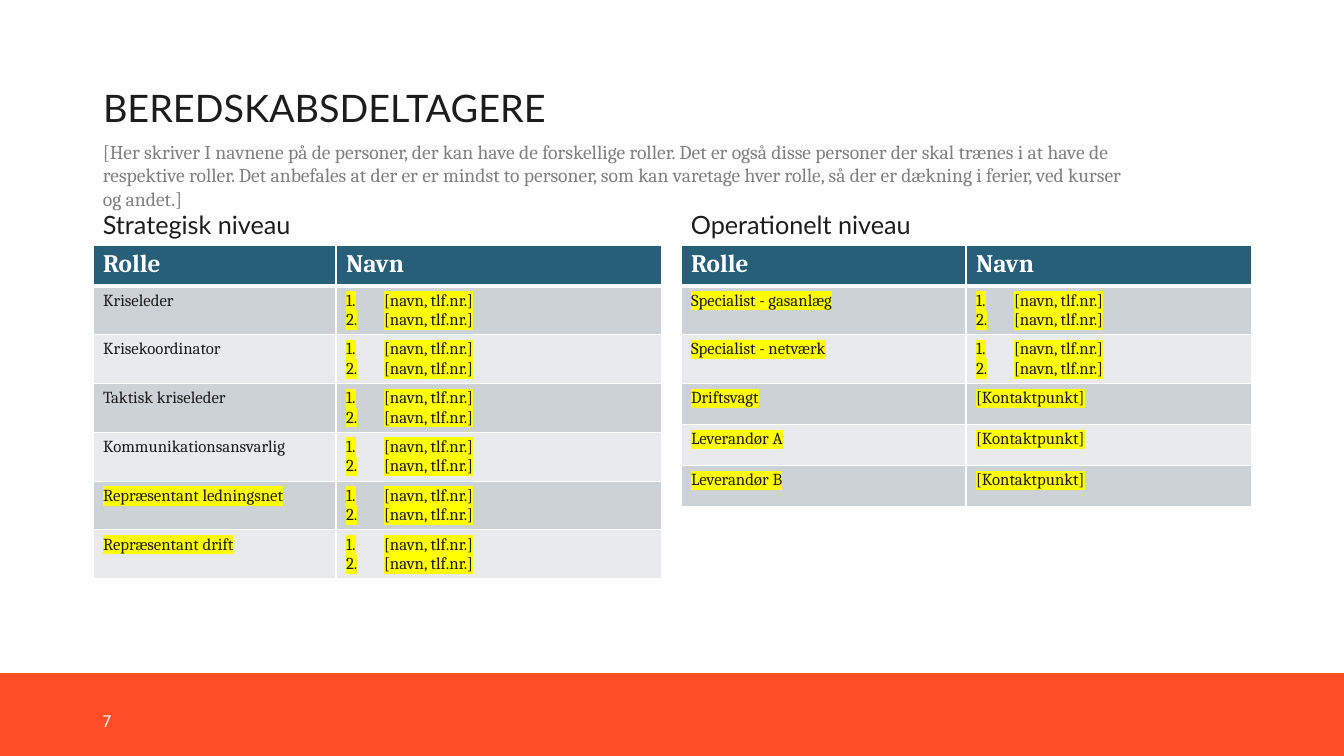
from lxml import etree
from pptx import Presentation
from pptx.dml.color import RGBColor
from pptx.enum.shapes import MSO_SHAPE
from pptx.enum.text import MSO_ANCHOR, MSO_AUTO_SIZE, PP_ALIGN
from pptx.oxml.ns import qn
from pptx.util import Emu, Pt

TITLE = "BEREDSKABSDELTAGERE"
INTRO = [
    "[Her skriver I navnene på de personer, der kan have de forskellige roller. Det er også disse personer der skal trænes i at have de",
    "respektive roller. Det anbefales at der er er mindst to personer, som kan varetage hver rolle, så der er dækning i ferier, ved kurser",
    "og andet.]",
]
PAGE_NUMBER = "7"
HEADER = ("Rolle", "Navn")
NAMES = ["[navn, tlf.nr.]", "[navn, tlf.nr.]"]
CONTACT = ["[Kontaktpunkt]"]
LEVELS = [
    {
        "heading": "Strategisk niveau",
        "left": 93,
        "columns": (243, 326),
        "roles": [
            ("Kriseleder", False, NAMES),
            ("Krisekoordinator", False, NAMES),
            ("Taktisk kriseleder", False, NAMES),
            ("Kommunikationsansvarlig", False, NAMES),
            ("Repræsentant ledningsnet", True, NAMES),
            ("Repræsentant drift", True, NAMES),
        ],
    },
    {
        "heading": "Operationelt niveau",
        "left": 681,
        "columns": (285, 286),
        "roles": [
            ("Specialist - gasanlæg", True, NAMES),
            ("Specialist - netværk", True, NAMES),
            ("Driftsvagt", True, CONTACT),
            ("Leverandør A", True, CONTACT),
            ("Leverandør B", True, CONTACT),
        ],
    },
]

COLORS = {
    "band": "FF4E26",
    "ink": "1C1C1C",
    "gray": "808080",
    "number": "EAEAEA",
    "white": "FFFFFF",
    "header": "275F78",
    "dark_row": "CDD2D6",
    "light_row": "E8EAEC",
    "marker": "FFFF00",
}
PAGE_WIDTH, PAGE_HEIGHT = 1344, 756
LEFT, FULL_WIDTH = 93, 1159
HEADING_TOP, HEADING_HEIGHT = 154, 91
ROW_HEIGHT = 41
BAND_TOP = 673
NUMBER_INDENT = 38


def px(length):
    return Emu(round(length * 914400 / 100.8))


def rgb(name):
    return RGBColor.from_string(COLORS[name])


def add_span(para, text, size, font, color, bold=False, marked=False):
    span = para.add_run()
    span.text = text
    span.font.size = Pt(size)
    span.font.name = font
    span.font.bold = bold
    span.font.color.rgb = rgb(color)
    if marked:
        highlight = etree.Element(qn("a:highlight"))
        etree.SubElement(highlight, qn("a:srgbClr"), val=COLORS["marker"])
        span.font._element.find(qn("a:latin")).addprevious(highlight)


def fill_frame(frame, lines, size, font, color, anchor, spacing=1.0, wrap=True):
    frame.word_wrap = wrap
    frame.auto_size = MSO_AUTO_SIZE.NONE
    frame.vertical_anchor = anchor
    for index, line in enumerate(lines):
        para = frame.add_paragraph() if index else frame.paragraphs[0]
        para.alignment = PP_ALIGN.LEFT
        para.line_spacing = spacing
        add_span(para, line, size, font, color)


def add_text(page, area, *style, **options):
    box = page.shapes.add_textbox(*map(px, area))
    fill_frame(box.text_frame, *style, **options)


def number_paragraph(para):
    properties = para._p.get_or_add_pPr()
    properties.set("marL", str(px(NUMBER_INDENT)))
    properties.set("indent", str(-px(NUMBER_INDENT)))
    etree.SubElement(properties, qn("a:buFont"), typeface="+mj-lt")
    etree.SubElement(properties, qn("a:buAutoNum"), type="arabicPeriod")


def style_cell(cell, fill, top, bottom):
    properties = cell._tc.get_or_add_tcPr()
    for side, width in (("L", 1), ("R", 1), ("T", top), ("B", bottom)):
        line = etree.SubElement(properties, qn(f"a:ln{side}"), w=str(Pt(width)))
        solid = etree.SubElement(line, qn("a:solidFill"))
        etree.SubElement(solid, qn("a:srgbClr"), val=COLORS["white"])
    cell.fill.solid()
    cell.fill.fore_color.rgb = rgb(fill)


def add_level(page, level):
    left, columns, roles = level["left"], level["columns"], level["roles"]
    width = sum(columns)
    add_text(page, (left, HEADING_TOP, width, HEADING_HEIGHT), [level["heading"]],
             18, "Lato", "ink", MSO_ANCHOR.BOTTOM, spacing=0.9)
    count = len(roles) + 1
    area = (left, HEADING_TOP + HEADING_HEIGHT, width, ROW_HEIGHT * count)
    table = page.shapes.add_table(count, len(columns), *map(px, area)).table
    for column, column_width in zip(table.columns, columns):
        column.width = px(column_width)
    for row in table.rows:
        row.height = px(ROW_HEIGHT)

    for index, label in enumerate(HEADER):
        cell = table.cell(0, index)
        style_cell(cell, "header", 1, 3)
        add_span(cell.text_frame.paragraphs[0], label, 18, "Cambria", "white", bold=True)

    for row, (role, marked, people) in enumerate(roles, 1):
        fill = "dark_row" if row % 2 else "light_row"
        for column, (lines, highlighted) in enumerate((([role], marked), (people, True))):
            cell = table.cell(row, column)
            style_cell(cell, fill, 3 if row == 1 else 1, 1)
            for index, line in enumerate(lines):
                frame = cell.text_frame
                para = frame.add_paragraph() if index else frame.paragraphs[0]
                if len(lines) > 1:
                    number_paragraph(para)
                add_span(para, line, 12, "Cambria", "ink", marked=highlighted)


def main():
    deck = Presentation()
    deck.slide_width, deck.slide_height = px(PAGE_WIDTH), px(PAGE_HEIGHT)
    page = deck.slides.add_slide(deck.slide_layouts[5])
    page.background.fill.solid()
    page.background.fill.fore_color.rgb = rgb("white")

    band = page.shapes.add_shape(MSO_SHAPE.RECTANGLE, px(0), px(BAND_TOP),
                                 px(PAGE_WIDTH), px(PAGE_HEIGHT - BAND_TOP))
    band.shadow.inherit = False
    band.fill.solid()
    band.fill.fore_color.rgb = rgb("band")
    band.line.fill.background()

    title = page.shapes.title
    title.left, title.top, title.width, title.height = map(px, (LEFT, 15, FULL_WIDTH, 121))
    fill_frame(title.text_frame, [TITLE], 27, "Lato", "ink", MSO_ANCHOR.BOTTOM, spacing=0.9)

    for level in LEVELS:
        add_level(page, level)

    add_text(page, (LEFT, 701, 302, 40), [PAGE_NUMBER], 12, "Cabin", "number", MSO_ANCHOR.MIDDLE)
    add_text(page, (LEFT, 124, FULL_WIDTH, 91), INTRO, 14, "Cambria", "gray",
             MSO_ANCHOR.BOTTOM, wrap=False)
    deck.save("out.pptx")


if __name__ == "__main__":
    main()
